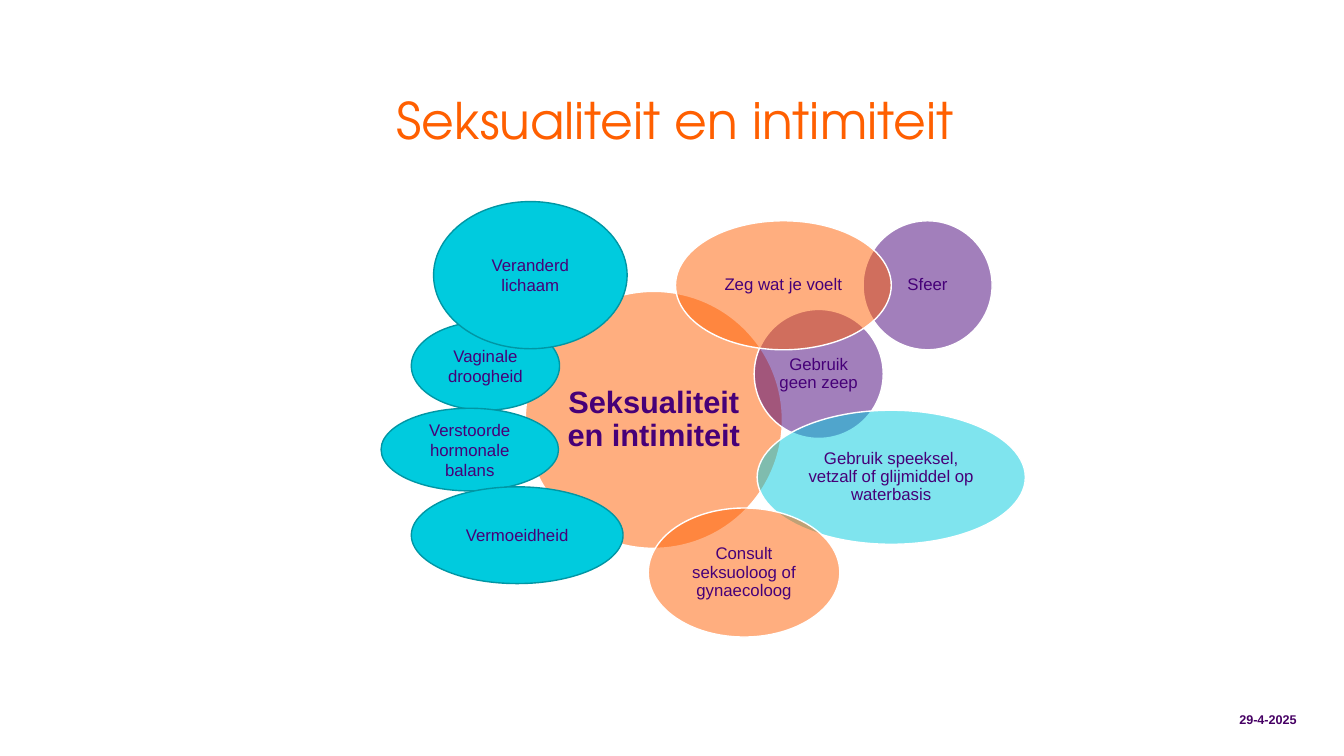
from lxml import etree
from pptx import Presentation
from pptx import util as u
from pptx.dml.color import RGBColor
from pptx.enum import shapes, text
from pptx.oxml.ns import qn

PX = 9144
ORANGE, PURPLE, CYAN, TEAL, WHITE = "FF5F00", "460078", "00CBDE", "0096A4", "FFFFFF"

TITLE = ("Seksualiteit en intimiteit", (140, 90, 1059, 49))
DATE = ("29-4-2025", (1169, 694, 127, 40))

ADVICE = [
    ("Seksualiteit en intimiteit", (521, 289, 255, 255), ORANGE, {"size": 22, "bold": True}),
    ("Gebruik geen zeep", (748, 307, 128, 128), PURPLE, {}),
    ("Gebruik speeksel, vetzalf of glijmiddel op waterbasis", (751, 407, 266, 133), CYAN, {}),
    ("Consult seksuoloog of gynaecoloog", (643, 504, 190, 128), ORANGE, {}),
    ("Sfeer", (856, 219, 128, 128), PURPLE, {}),
    ("Zeg wat je voelt", (670, 219, 214, 128), ORANGE, {}),
]

COMPLAINTS = [
    ("Vaginale droogheid", (408, 319, 147, 88)),
    ("Veranderd lichaam", (430, 200, 192, 146)),
    ("Verstoorde hormonale balans", (378, 405, 176, 82)),
    ("Vermoeidheid", (408, 483, 210, 96)),
]


def color(value):
    return RGBColor.from_string(value)


def scaled(area):
    return [length * PX for length in area]


def write(box, words, align="CENTER", anchor="MIDDLE", spacing=1.0, inset=None,
          size=12, name="Arial", ink=PURPLE, bold=False):
    frame = box.text_frame
    settings = {"word_wrap": True, "auto_size": text.MSO_AUTO_SIZE.NONE,
                "vertical_anchor": getattr(text.MSO_ANCHOR, anchor)}
    if inset is not None:
        settings.update({f"margin_{side}": inset * PX
                         for side in ("left", "top", "right", "bottom")})
    for key, value in settings.items():
        setattr(frame, key, value)
    para = frame.paragraphs[0]
    para.alignment = getattr(text.PP_ALIGN, align)
    para.line_spacing = spacing
    para.space_before = u.Pt(0)
    span = para.add_run()
    span.text = words
    for key, value in {"size": u.Pt(size), "name": name, "bold": bold}.items():
        setattr(span.font, key, value)
    span.font.color.rgb = color(ink)


def add_ellipse(page, area, fill, line, opacity=100):
    ellipse = page.shapes.add_shape(shapes.MSO_SHAPE.OVAL, *scaled(area))
    ellipse.shadow.inherit = False
    ellipse.fill.solid()
    ellipse.fill.fore_color.rgb = color(fill)
    if opacity < 100:
        shade = next(ellipse.element.spPr.iter(qn("a:srgbClr")))
        etree.SubElement(shade, qn("a:alpha")).set("val", str(opacity * 1000))
    ellipse.line.color.rgb = color(line)
    ellipse.line.width = u.Pt(1)
    return ellipse


def main():
    deck = Presentation()
    deck.slide_width, deck.slide_height = 1333 * PX, 750 * PX
    page = deck.slides.add_slide(deck.slide_layouts[5])

    words, area = TITLE
    title = page.shapes.title
    for key, value in zip(("left", "top", "width", "height"), scaled(area)):
        setattr(title, key, value)
    write(title, words, anchor="TOP", spacing=0.9, size=36,
          name="TeX Gyre Adventor", ink=ORANGE)

    words, area = DATE
    date = page.shapes.add_textbox(*scaled(area))
    write(date, words, align="RIGHT", size=9, ink="460064", bold=True)

    for words, area, fill, style in ADVICE:
        ellipse = add_ellipse(page, area, fill, WHITE, opacity=50)
        write(ellipse, words, spacing=0.9, inset=2, **style)

    for words, area in COMPLAINTS:
        write(add_ellipse(page, area, CYAN, TEAL), words)

    deck.save("out.pptx")


if __name__ == "__main__":
    main()
